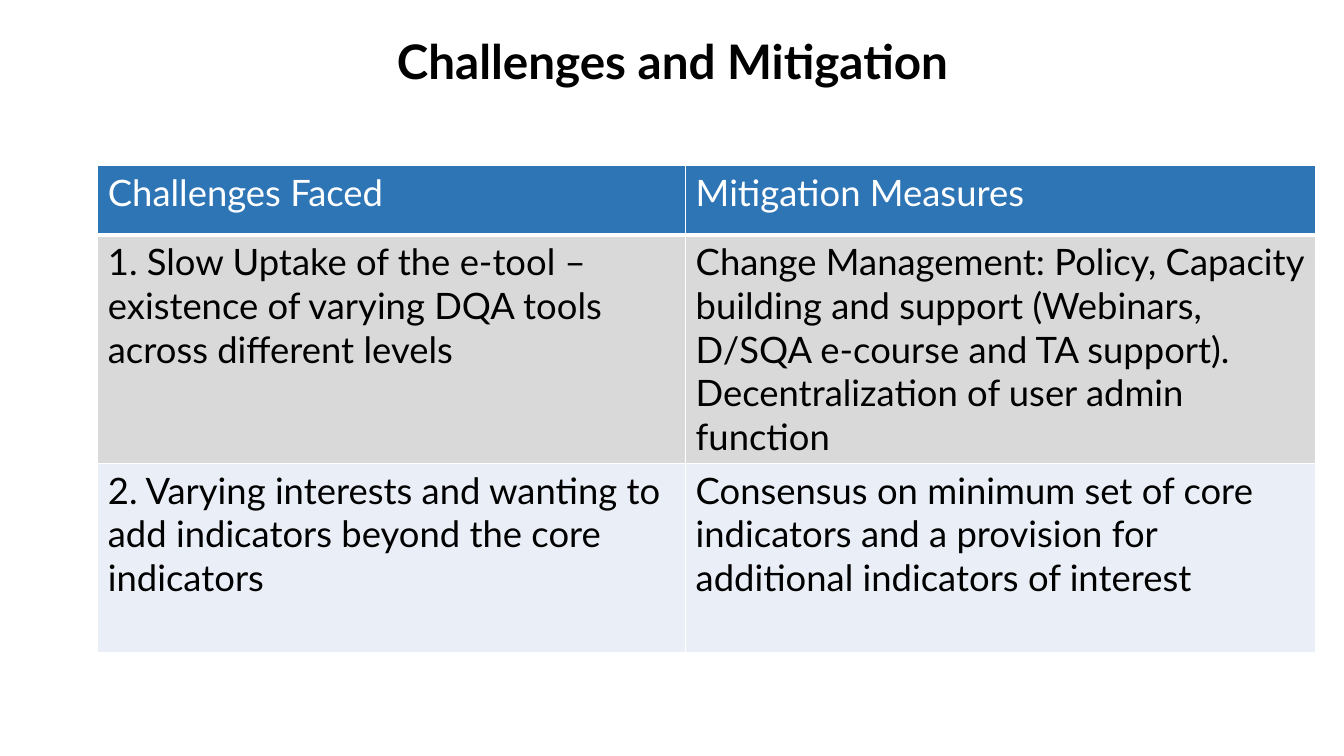
from lxml import etree
from pptx import Presentation
from pptx import util as u
from pptx.dml.color import RGBColor
from pptx.enum import text
from pptx.oxml.ns import qn

TITLE = "Challenges and Mitigation"
ROWS = [
    ("Challenges Faced", "Mitigation Measures"),
    ("1. Slow Uptake of the e-tool – existence of varying DQA tools across different levels",
     "Change Management: Policy, Capacity building and support (Webinars, D/SQA e-course "
     "and TA support).\nDecentralization of user admin function"),
    ("2. Varying interests and wanting to add indicators beyond the core indicators",
     "Consensus on minimum set of core indicators and a provision for additional "
     "indicators of interest"),
]
COLUMN_WIDTHS = (5.83, 6.25)
ROW_HEIGHTS = (0.69, 2.26, 1.88)
TABLE_LEFT, TABLE_TOP = 0.97, 1.64

FONT = "Lato"
BLACK = RGBColor(0x00, 0x00, 0x00)
WHITE = RGBColor(0xFF, 0xFF, 0xFF)
BLUE = RGBColor(0x2E, 0x75, 0xB6)
GREY = RGBColor(0xD9, 0xD9, 0xD9)
PALE_BLUE = RGBColor(0xEA, 0xEF, 0xF7)
ROW_COLOURS = [(BLUE, WHITE), (GREY, BLACK), (PALE_BLUE, BLACK)]


def style_paragraph(para, size, colour, bold=False):
    for span in para.runs:
        span.font.name = FONT
        span.font.size = u.Pt(size)
        span.font.bold = bold
        span.font.color.rgb = colour


def add_borders(cell, widths):
    """Draw white borders; widths are points for left, right, top, bottom."""
    properties = cell._tc.get_or_add_tcPr()
    for side, width in zip("LRTB", widths):
        line = etree.SubElement(properties, qn(f"a:ln{side}"), w=str(u.Pt(width)))
        fill = etree.SubElement(line, qn("a:solidFill"))
        etree.SubElement(fill, qn("a:srgbClr"), val=str(WHITE))


def add_title(page):
    box = page.shapes.add_textbox(u.Inches(1.49), u.Inches(0.38),
                                  u.Inches(10.36), u.Inches(0.63))
    frame = box.text_frame
    frame.word_wrap = True
    frame.vertical_anchor = text.MSO_ANCHOR.MIDDLE
    frame.margin_top = 0
    frame.margin_bottom = u.Inches(0.12)
    frame.text = TITLE
    para = frame.paragraphs[0]
    para.alignment = text.PP_ALIGN.CENTER
    para.line_spacing = 0.9
    style_paragraph(para, 34, BLACK, bold=True)


def add_challenges_table(page):
    table = page.shapes.add_table(
        len(ROWS), len(COLUMN_WIDTHS), u.Inches(TABLE_LEFT), u.Inches(TABLE_TOP),
        u.Inches(sum(COLUMN_WIDTHS)), u.Inches(sum(ROW_HEIGHTS))).table
    for column, width in zip(table.columns, COLUMN_WIDTHS):
        column.width = u.Inches(width)
    for index, (row, height) in enumerate(zip(table.rows, ROW_HEIGHTS)):
        row.height = u.Inches(height)
        fill_colour, font_colour = ROW_COLOURS[index]
        top = 3 if index == 1 else 1
        bottom = 3 if index == 0 else 1
        for cell, words in zip(row.cells, ROWS[index]):
            add_borders(cell, (1, 1, top, bottom))
            cell.fill.solid()
            cell.fill.fore_color.rgb = fill_colour
            cell.text_frame.text = words
            for para in cell.text_frame.paragraphs:
                style_paragraph(para, 26, font_colour)


def main():
    deck = Presentation()
    deck.slide_width, deck.slide_height = u.Inches(13.33), u.Inches(7.5)
    page = deck.slides.add_slide(deck.slide_layouts[6])
    add_title(page)
    add_challenges_table(page)
    deck.save("out.pptx")


if __name__ == "__main__":
    main()
